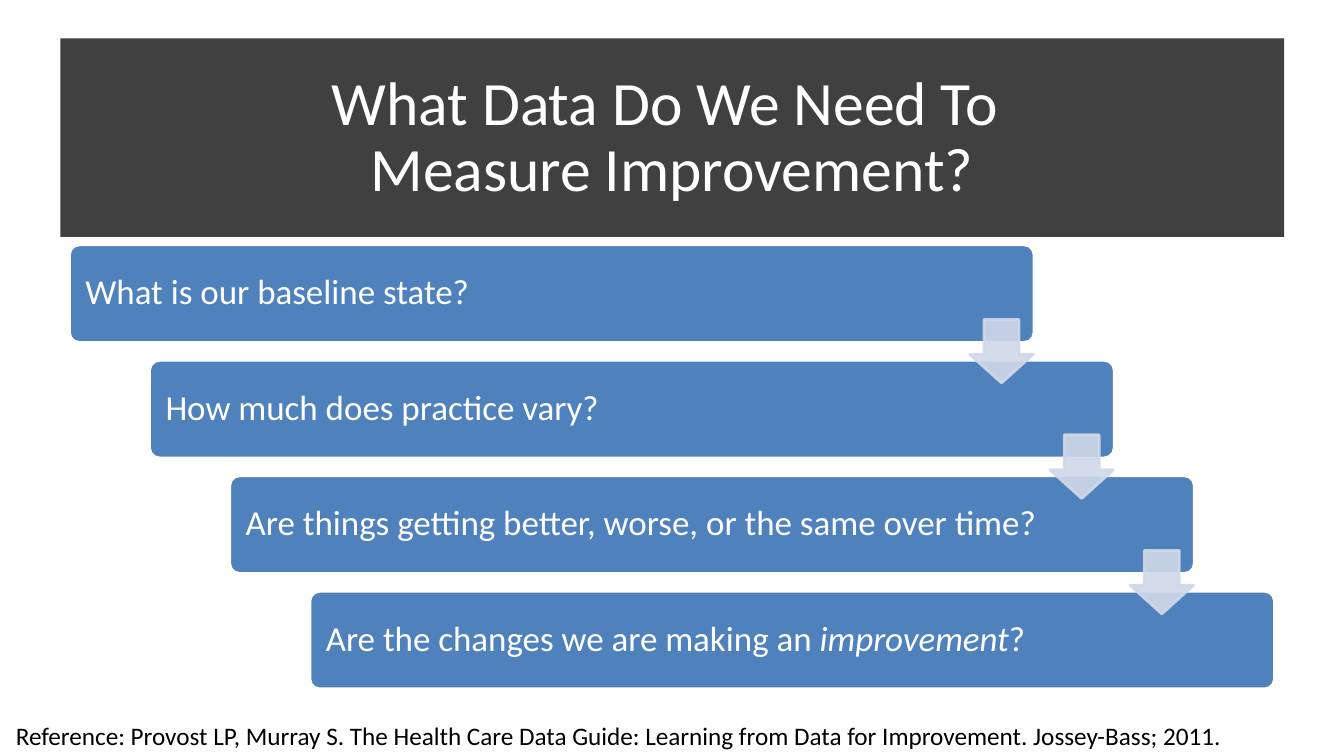
"""Build a slide of four stepped questions on measuring improvement."""
import pptx
import pptx.util
import pptx.dml.color
import pptx.enum.shapes
import pptx.enum.text
import pptx.oxml.ns
import lxml.etree

Cm = pptx.util.Cm
Pt = pptx.util.Pt
RGBColor = pptx.dml.color.RGBColor
Kind = pptx.enum.shapes.MSO_SHAPE
Align = pptx.enum.text.PP_ALIGN
Anchor = pptx.enum.text.MSO_ANCHOR
qn = pptx.oxml.ns.qn

WHITE = RGBColor(0xFF, 0xFF, 0xFF)
BLACK = RGBColor(0x00, 0x00, 0x00)
GREY = RGBColor(0x40, 0x40, 0x40)
BLUE = RGBColor(0x4F, 0x81, 0xBD)
PALE = RGBColor(0xD0, 0xD8, 0xE8)

STEPS = [
    ["What is our baseline state?"],
    ["How much does practice vary?"],
    ["Are things getting better, worse, or the same over time?"],
    ["Are the changes we are making an ", "improvement", "?"],
]
STEP_X, STEP_Y = 2.02, 2.91


def add_form(kind, left, top, width, height, fill, line=None):
    form = slide.shapes.add_shape(kind, Cm(left), Cm(top), Cm(width), Cm(height))
    form.shadow.inherit = False
    form.fill.solid()
    form.fill.fore_color.rgb = fill
    if line is None:
        form.line.fill.background()
    else:
        form.line.color.rgb = line
        form.line.width = Pt(2)
    return form


def set_font(font, size, color):
    font.name = "Calibri"
    font.size = Pt(size)
    font.color.rgb = color


deck = pptx.Presentation()
deck.slide_width = Cm(33.87)
deck.slide_height = Cm(19.05)
slide = deck.slides.add_slide(deck.slide_layouts[5])

title = slide.shapes.title
title.left, title.top = Cm(1.98), Cm(1.65)
title.width, title.height = Cm(29.92), Cm(3.68)
frame = title.text_frame
frame.text = "What Data Do We Need To \vMeasure Improvement?"
frame.vertical_anchor = Anchor.MIDDLE
para = frame.paragraphs[0]
para.alignment = Align.CENTER
para.line_spacing = 0.9
for run in para.runs:
    set_font(run.font, 44, WHITE)

band = add_form(Kind.RECTANGLE, 1.52, 0.97, 30.84, 5, GREY)
title.element.addprevious(band.element)

for row, parts in enumerate(STEPS):
    box = add_form(Kind.ROUNDED_RECTANGLE, 1.75 + row * STEP_X,
                   6.17 + row * STEP_Y, 24.31, 2.46, BLUE, WHITE)
    box.adjustments[0] = 0.1
    frame = box.text_frame
    frame.word_wrap = True
    frame.vertical_anchor = Anchor.MIDDLE
    frame.margin_left = Cm(0.33)
    para = frame.paragraphs[0]
    para.alignment = Align.LEFT
    para.line_spacing = 0.9
    for part in parts:
        run = para.add_run()
        run.text = part
        set_font(run.font, 25, WHITE)
        if part == "improvement":
            run.font.italic = True

for row in range(len(STEPS) - 1):
    arrow = add_form(Kind.DOWN_ARROW, 24.44 + row * STEP_X,
                     8.05 + row * STEP_Y, 1.6, 1.6, PALE, PALE)
    arrow.adjustments[0] = 0.55
    arrow.adjustments[1] = 0.45
    for color in arrow.element.spPr.iter(qn("a:srgbClr")):
        lxml.etree.SubElement(color, qn("a:alpha"), val="90000")

note = slide.shapes.add_textbox(Cm(0), Cm(18.03), Cm(33.87), Cm(1.02))
frame = note.text_frame
frame.word_wrap = True
frame.margin_left = Cm(0.4)
frame.text = ("Reference: Provost LP, Murray S. The Health Care Data Guide: "
              "Learning from Data for Improvement. Jossey-Bass; 2011.")
set_font(frame.paragraphs[0].runs[0].font, 18, BLACK)

deck.save("out.pptx")
